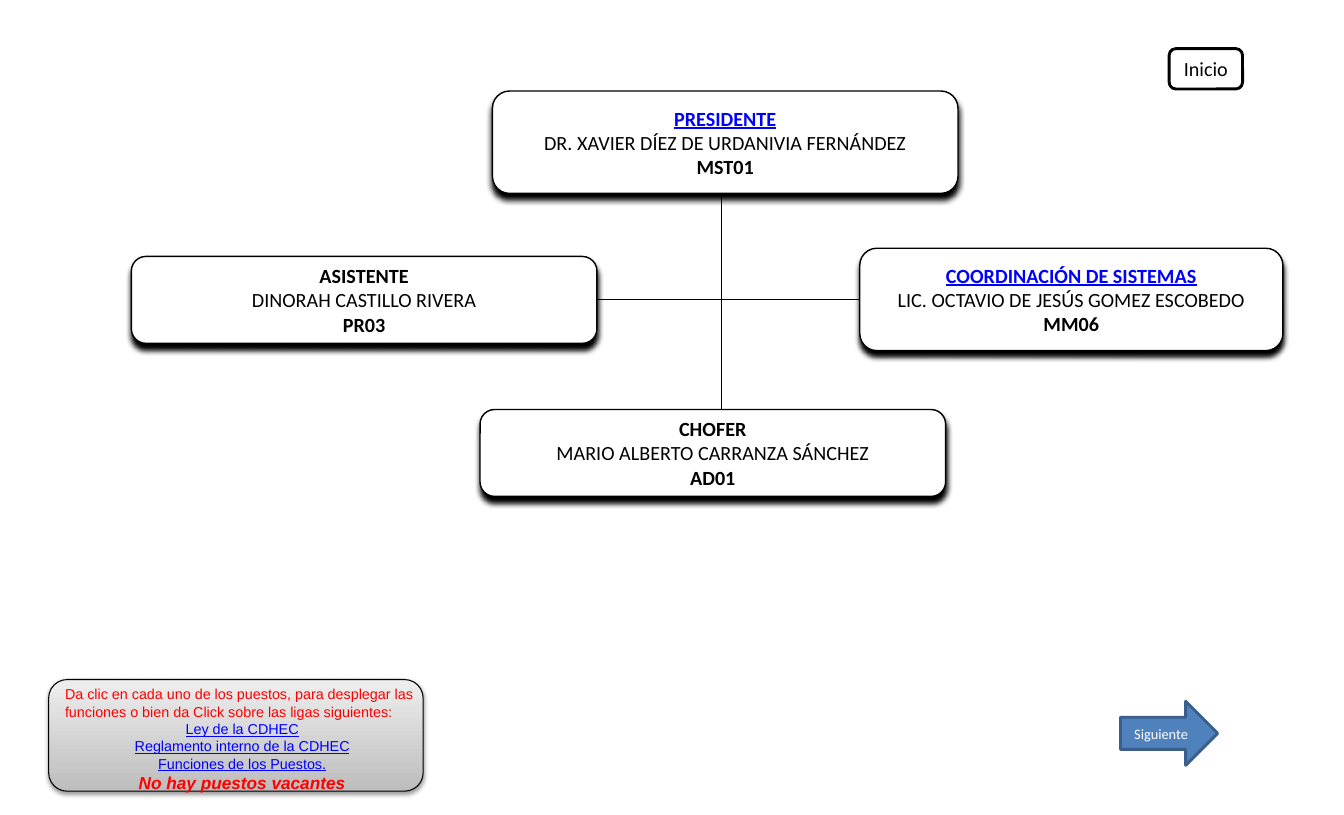
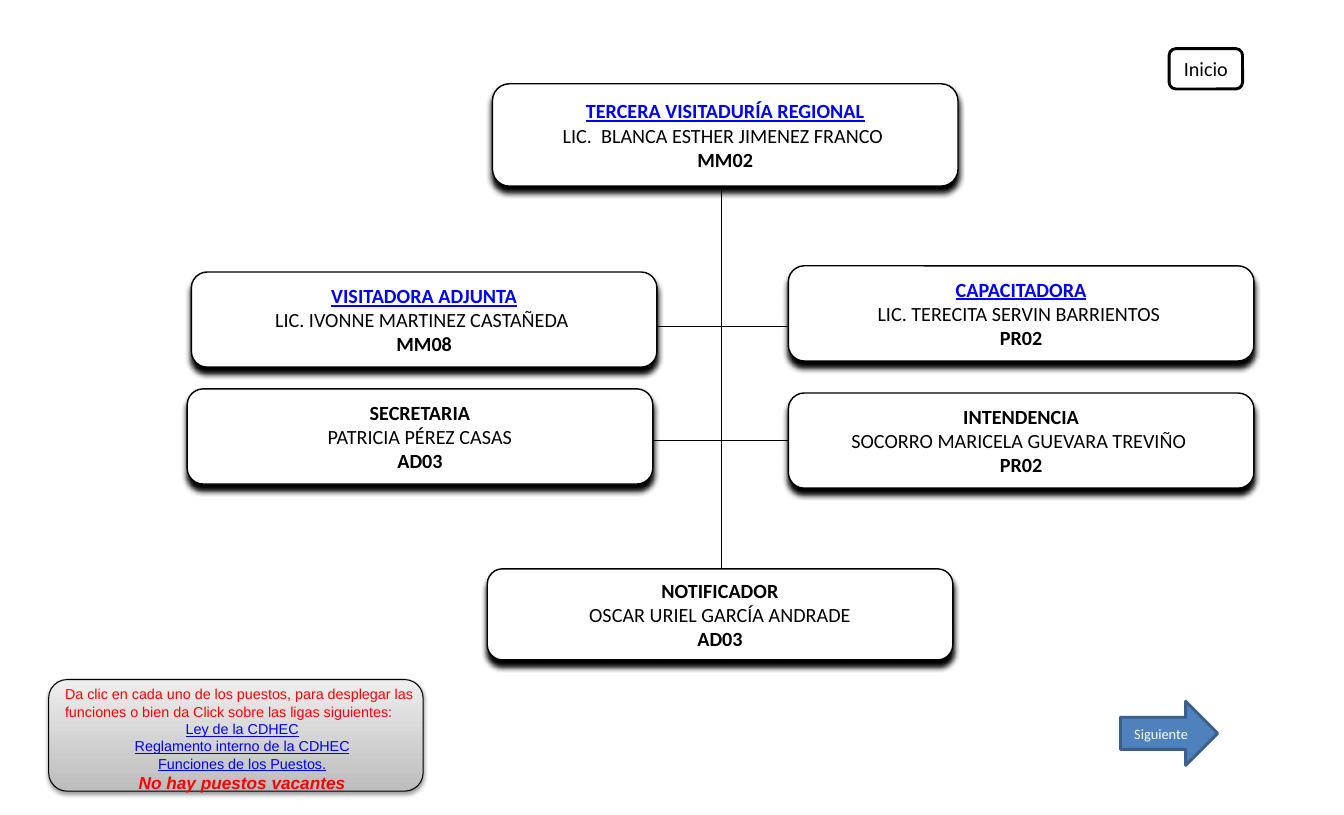
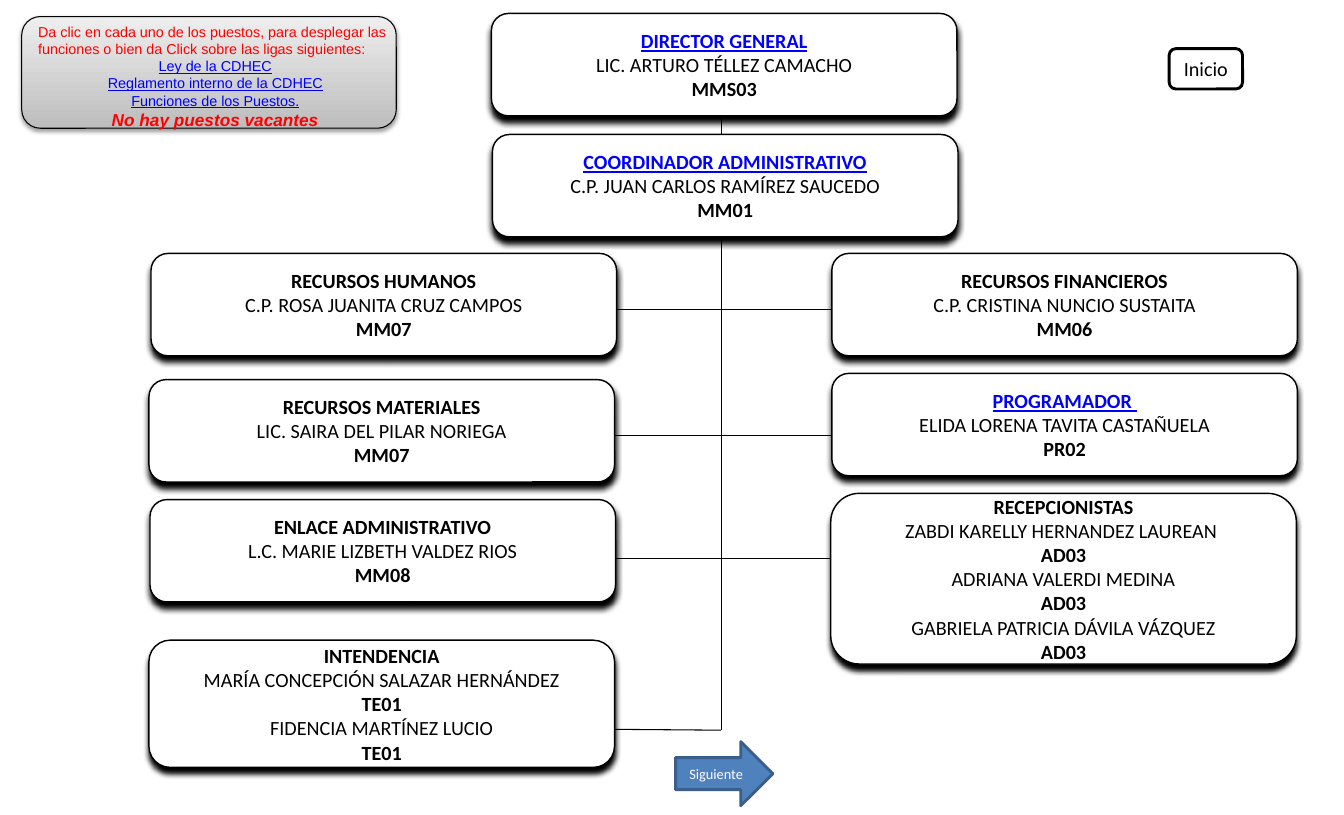
from lxml import etree
from pptx import Presentation
from pptx.dml.color import RGBColor
from pptx.enum.shapes import MSO_CONNECTOR, MSO_SHAPE
from pptx.enum.text import MSO_ANCHOR, PP_ALIGN
from pptx.oxml.ns import qn
from pptx.util import Inches, Pt

ROUND = MSO_SHAPE.ROUNDED_RECTANGLE
ARROW = MSO_SHAPE.RIGHT_ARROW
STRAIGHT = MSO_CONNECTOR.STRAIGHT
CENTER = PP_ALIGN.CENTER
MIDDLE = MSO_ANCHOR.MIDDLE

BLACK = RGBColor(0x00, 0x00, 0x00)
WHITE = RGBColor(0xFF, 0xFF, 0xFF)
LINK = RGBColor(0x00, 0x00, 0xFF)
RED = RGBColor(0xFF, 0x00, 0x00)
BLUE = RGBColor(0x4F, 0x81, 0xBD)
NAVY = RGBColor(0x3A, 0x5F, 0x8C)
DARK = RGBColor(0xBD, 0xBD, 0xBD)
LIGHT = RGBColor(0xEE, 0xEE, 0xEE)

WIDE = 4.5   # usual width of a post
TRUNK = 6.97  # x of the vertical line

NOTE = [
    "Da clic en cada uno de los puestos, para desplegar las funciones "
    "o bien da Click sobre las ligas siguientes:",
    "Ley de la CDHEC",
    "Reglamento interno de la CDHEC",
    "Funciones de los Puestos.",
    "No hay puestos vacantes",
]

# Each post: left, top, width, height, linked, lines (title, then name and code)
CHARTS = [
    {
        "lines": [(TRUNK, 1.8, TRUNK, 3.96), (5.77, 2.9, 8.31, 2.9)],
        "posts": [
            (4.76, 0.88, WIDE, 0.99, True,
             ["PRESIDENTE", "DR. XAVIER DÍEZ DE URDANIVIA FERNÁNDEZ", "MST01"]),
            (1.27, 2.48, WIDE, 0.84, False,
             ["ASISTENTE", "DINORAH CASTILLO RIVERA", "PR03"]),
            (8.31, 2.4, 4.09, 0.99, True,
             ["COORDINACIÓN DE SISTEMAS",
              "LIC. OCTAVIO DE JESÚS GOMEZ ESCOBEDO", "MM06"]),
            (4.64, 3.96, WIDE, 0.84, False,
             ["CHOFER", "MARIO ALBERTO CARRANZA SÁNCHEZ", "AD01"]),
        ],
        "note": (0.47, 6.57),
        "next": (10.83, 6.78),
    },
    {
        "lines": [(TRUNK, 1.75, TRUNK, 5.5), (5.87, 3.16, 8.07, 3.16),
                  (6.31, 4.26, 7.82, 4.26)],
        "posts": [
            (4.76, 0.81, WIDE, 0.99, True,
             ["TERCERA VISITADURÍA REGIONAL",
              "LIC.  BLANCA ESTHER JIMENEZ FRANCO ", "MM02"]),
            (1.85, 2.63, WIDE, 0.92, True,
             ["VISITADORA ADJUNTA", "LIC. IVONNE MARTINEZ CASTAÑEDA ", "MM08"]),
            (7.62, 2.57, WIDE, 0.92, True,
             ["CAPACITADORA", "LIC. TERECITA SERVIN BARRIENTOS ", "PR02"]),
            (1.81, 3.76, WIDE, 0.92, False,
             ["SECRETARIA", "PATRICIA PÉREZ CASAS", "AD03"]),
            (7.62, 3.8, WIDE, 0.92, False,
             ["INTENDENCIA", "SOCORRO MARICELA GUEVARA TREVIÑO ", "PR02"]),
            (4.71, 5.5, WIDE, 0.88, False,
             ["NOTIFICADOR", "OSCAR URIEL GARCÍA ANDRADE", "AD03"]),
        ],
        "note": (0.47, 6.57),
        "next": (10.83, 6.78),
    },
    {
        "lines": [(TRUNK, 1.12, TRUNK, 7.06), (5.74, 7.05, TRUNK, 7.06)]
        + [(5.79, y, 8.09, y) for y in (2.99, 4.21, 5.4)],
        "posts": [
            (4.75, 0.13, WIDE, 0.99, True,
             ["DIRECTOR GENERAL", "LIC. ARTURO TÉLLEZ CAMACHO", "MMS03"]),
            (4.76, 1.3, WIDE, 0.99, True,
             ["COORDINADOR ADMINISTRATIVO",
              "C.P. JUAN CARLOS RAMÍREZ SAUCEDO", "MM01"]),
            (1.46, 2.45, WIDE, 0.99, False,
             ["RECURSOS HUMANOS", "C.P. ROSA JUANITA CRUZ CAMPOS", "MM07"]),
            (8.04, 2.45, WIDE, 0.99, False,
             ["RECURSOS FINANCIEROS", "C.P. CRISTINA NUNCIO SUSTAITA", "MM06"]),
            (1.44, 3.67, WIDE, 0.99, False,
             ["RECURSOS MATERIALES", "LIC. SAIRA DEL PILAR NORIEGA", "MM07"]),
            (8.04, 3.61, WIDE, 0.99, True,
             ["PROGRAMADOR ", "ELIDA LORENA TAVITA CASTAÑUELA", "PR02"]),
            (1.45, 4.83, WIDE, 0.99, False,
             ["ENLACE ADMINISTRATIVO", "L.C. MARIE LIZBETH VALDEZ RIOS", "MM08"]),
            (8.03, 4.77, WIDE, 1.65, False,
             ["RECEPCIONISTAS", "ZABDI KARELLY HERNANDEZ LAUREAN ", "AD03",
              "ADRIANA VALERDI MEDINA", "AD03",
              "GABRIELA PATRICIA DÁVILA VÁZQUEZ", "AD03"]),
            (1.44, 6.19, WIDE, 1.23, False,
             ["INTENDENCIA", "MARÍA CONCEPCIÓN SALAZAR HERNÁNDEZ", "TE01",
              "FIDENCIA MARTÍNEZ LUCIO", "TE01"]),
        ],
        "note": (0.21, 0.16),
        "next": (6.53, 7.17),
    },
]


def add_box(slide, kind, box, fill, edge, weight):
    shape = slide.shapes.add_shape(kind, *map(Inches, box))
    shape.shadow.inherit = False
    shape.fill.solid()
    shape.fill.fore_color.rgb = fill
    shape.line.color.rgb = edge
    shape.line.width = Pt(weight)
    return shape


def cast_shadow(shape, blur, dist, alpha):
    """Give the shape a black shadow straight below it."""
    effects = shape._element.spPr.find(qn("a:effectLst"))
    outer = etree.SubElement(effects, qn("a:outerShdw"), blurRad=str(Pt(blur)),
                             dist=str(Pt(dist)), dir="5400000",
                             algn="ctr", rotWithShape="0")
    color = etree.SubElement(outer, qn("a:srgbClr"), val=str(BLACK))
    etree.SubElement(color, qn("a:alpha"), val=str(alpha * 1000))


def style(par, size, color, face="Calibri", bold=False, under=False, align=CENTER):
    par.alignment = align
    font = par.font
    font.name, font.size, font.bold, font.underline = face, Pt(size), bold, under
    font.color.rgb = color


def fill_text(frame, lines):
    """Write one paragraph a line and return the paragraphs."""
    frame.text = "\n".join(lines)
    return frame.paragraphs


def add_line(slide, x1, y1, x2, y2):
    line = slide.shapes.add_connector(STRAIGHT, *map(Inches, (x1, y1, x2, y2)))
    line.line.color.rgb = BLACK
    line.line.width = Pt(0.75)
    etree.SubElement(line._element.spPr, qn("a:effectLst"))


def add_post(slide, left, top, width, height, linked, lines):
    shape = add_box(slide, ROUND, (left, top, width, height), WHITE, BLACK, 1)
    cast_shadow(shape, 4, 4, 100)
    frame = shape.text_frame
    frame.word_wrap = False
    frame.vertical_anchor = MIDDLE
    frame.margin_left = frame.margin_right = Inches(0.17)
    frame.margin_top = frame.margin_bottom = Inches(0.09)
    for i, par in enumerate(fill_text(frame, lines)):
        link = linked and i == 0
        style(par, 14, LINK if link else BLACK, bold=i % 2 == 0, under=link)


def add_button(slide, kind, box, text, size, fill, edge, weight, color):
    shape = add_box(slide, kind, box, fill, edge, weight)
    shape.text_frame.vertical_anchor = MIDDLE
    style(fill_text(shape.text_frame, [text])[0], size, color)


def add_note(slide, left, top):
    panel = add_box(slide, ROUND, (left, top, 3.62, 1.08), LIGHT, BLACK, 0.75)
    cast_shadow(panel, 3.1, 1.6, 38)
    panel.fill.gradient()
    panel.fill.gradient_angle = 90
    for stop, color, place in zip(panel.fill.gradient_stops, (DARK, LIGHT), (0, 1)):
        stop.color.rgb = color
        stop.position = place

    text = slide.shapes.add_textbox(*map(Inches, (left + 0.06, top + 0.01, 3.62, 1.14)))
    text.text_frame.word_wrap = True
    first, *links, last = fill_text(text.text_frame, NOTE)
    style(first, 10, RED, "Arial", align=PP_ALIGN.LEFT)
    for par in links:
        style(par, 10, LINK, "Arial", under=True)
    style(last, 12, RED, "Arial", bold=True)
    last.font.italic = True


def add_chart_slide(deck, chart):
    slide = deck.slides.add_slide(deck.slide_layouts[6])
    for line in chart["lines"]:
        add_line(slide, *line)
    for post in chart["posts"]:
        add_post(slide, *post)
    add_button(slide, ROUND, (11.3, 0.47, 0.71, 0.39), "Inicio", 14,
               WHITE, BLACK, 2, BLACK)
    add_note(slide, *chart["note"])
    add_button(slide, ARROW, (*chart["next"], 0.94, 0.62), "Siguiente", 10,
               BLUE, NAVY, 2, WHITE)


def main():
    deck = Presentation()
    deck.slide_width = Inches(12.99)
    deck.slide_height = Inches(7.88)
    for chart in CHARTS:
        add_chart_slide(deck, chart)
    deck.save("out.pptx")


if __name__ == "__main__":
    main()
